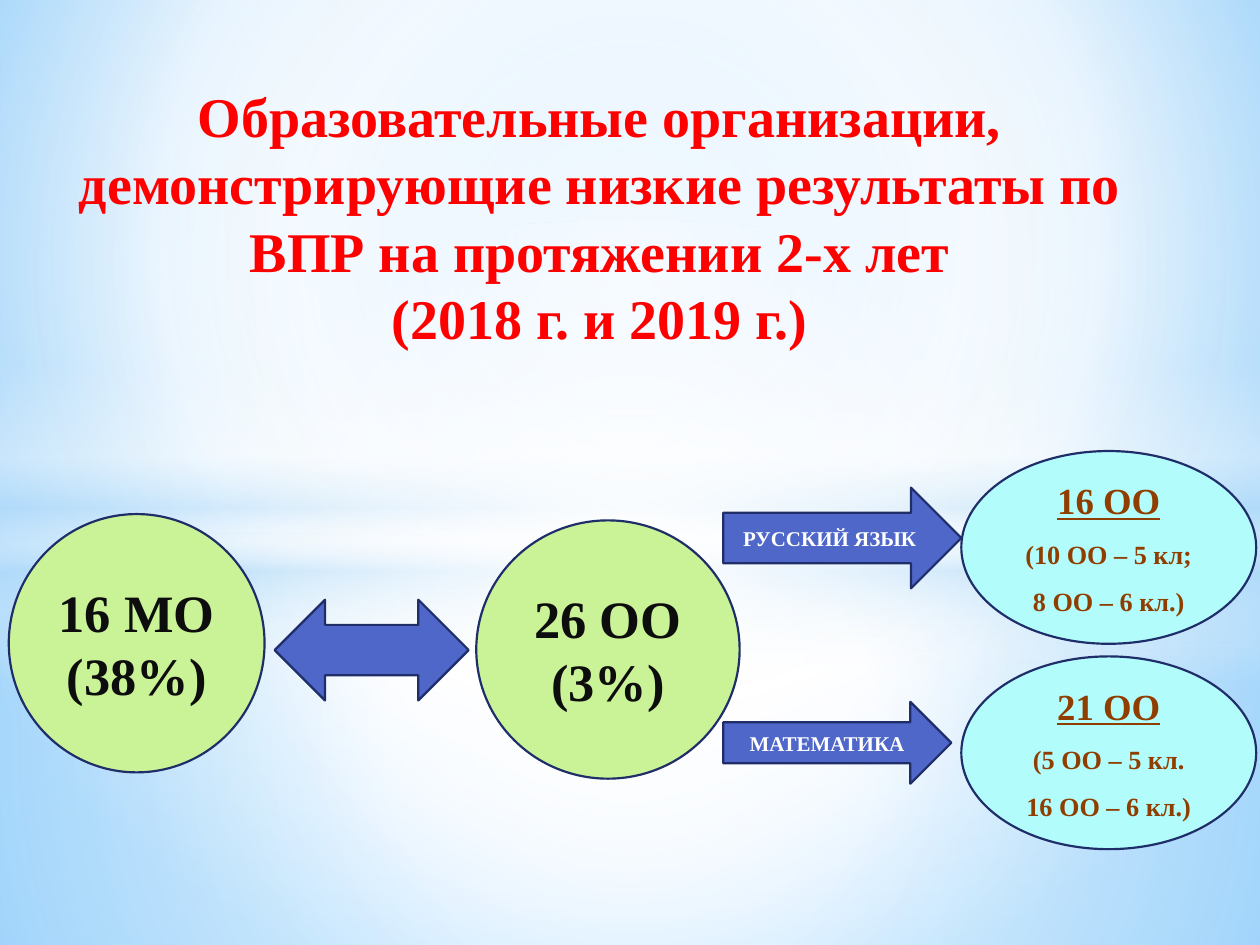
import pptx
import pptx.util
import pptx.dml.color
import pptx.enum.shapes
import pptx.enum.text
import pptx.oxml
import pptx.oxml.ns

Inches = pptx.util.Inches
Pt = pptx.util.Pt
Kind = pptx.enum.shapes.MSO_SHAPE

FONT = "Times New Roman"
GREEN, CYAN, BLUE, NAVY = "CAF297", "B2FCFC", "4E67C8", "1F2E69"
BLACK, WHITE, BROWN, RED = "0D0D0D", "FFFFFF", "903E00", "FF0000"
MIST = "B4DCFA"

TITLE = ("Образовательные организации, демонстрирующие низкие результаты "
         "по ВПР на протяжении 2-х лет\v(2018 г. и 2019 г.)")

# Gradient stops: position %, colour, opacity %
BACKDROP = [(0, "9ED5FF", 100), (60, WHITE, 100), (100, "5BB9FF", 100)]
CENTRE = (50, 50, 50, 50)
# Kind, place, stops, focus of a radial gradient (None: top to bottom)
GLOWS = [
    (Kind.RECTANGLE, (0, 4.23, 10, 3.27),
     [(0, WHITE, 91), (37, WHITE, 76), (100, MIST, 79)], CENTRE),
    (Kind.RECTANGLE, (0, 0, 10, 4.23),
     [(0, WHITE, 89), (48, WHITE, 62), (100, MIST, 79)], CENTRE),
    (Kind.RECTANGLE, (0, 2.9, 10, 2.5),
     [(0, WHITE, 0), (29, WHITE, 30), (45, MIST, 40), (55, WHITE, 26),
      (65, MIST, 60), (100, WHITE, 0)], None),
    (Kind.OVAL, (0, 1.75, 10, 5.58),
     [(0, WHITE, 100), (54, WHITE, 0)], CENTRE),
]

# Kind, place, fill, text colour, lines of (text, size)
DIAGRAM = [
    (Kind.OVAL, (0.07, 4.08, 2.03, 2.05), GREEN, BLACK,
     [("16 МО", 30), ("(38%)", 30)]),
    (Kind.LEFT_RIGHT_ARROW, (2.18, 4.76, 1.54, 0.8), BLUE, WHITE, []),
    (Kind.OVAL, (3.78, 4.13, 2.09, 2.05), GREEN, BLACK,
     [("26 ОО", 30), ("(3%)", 30)]),
    (Kind.RIGHT_ARROW, (5.74, 3.87, 1.89, 0.8), BLUE, WHITE,
     [("РУССКИЙ ЯЗЫК", 12)]),
    (Kind.RIGHT_ARROW, (5.74, 5.57, 1.81, 0.65), BLUE, WHITE,
     [("МАТЕМАТИКА", 12)]),
    (Kind.OVAL, (7.63, 3.58, 2.34, 1.53), CYAN, BROWN,
     [("16 ОО", 21), ("(10 ОО – 5 кл;", 15), ("8 ОО – 6 кл.)", 15)]),
    (Kind.OVAL, (7.63, 5.21, 2.34, 1.53), CYAN, BROWN,
     [("21 ОО", 21), ("(5 ОО – 5 кл.", 15), ("16 ОО – 6 кл.)", 15)]),
]


def rgb(colour):
    return pptx.dml.color.RGBColor.from_string(colour)


def fill_gradient(owner, fill, stops, focus):
    """Fill a shape or the page background with a gradient with opacity."""
    fill.solid()
    solid = owner.element.find(".//" + pptx.oxml.ns.qn("a:solidFill"))
    stop_xml = "".join(
        f'<a:gs pos="{position * 1000}"><a:srgbClr val="{colour}">'
        f'<a:alpha val="{opacity * 1000}"/></a:srgbClr></a:gs>'
        for position, colour, opacity in stops)
    if focus:
        sides = " ".join(f'{side}="{value * 1000}"'
                         for side, value in zip("ltrb", focus))
        course = f'<a:path path="circle"><a:fillToRect {sides}/></a:path>'
    else:
        course = '<a:lin ang="5400000" scaled="0"/>'
    gradient = pptx.oxml.parse_xml(
        f'<a:gradFill {pptx.oxml.ns.nsdecls("a")} rotWithShape="1">'
        f"<a:gsLst>{stop_xml}</a:gsLst>{course}</a:gradFill>")
    solid.getparent().replace(solid, gradient)


def add_shape(page, kind, place):
    shape = page.shapes.add_shape(kind, *map(Inches, place))
    shape.shadow.inherit = False
    return shape


def write(frame, lines, colour):
    """Write centred bold lines; a list led by a larger line is spaced."""
    frame.word_wrap = True
    headed = lines[0][1] > lines[-1][1]
    for index, (text, size) in enumerate(lines):
        para = frame.add_paragraph() if index else frame.paragraphs[0]
        para.text = text
        para.alignment = pptx.enum.text.PP_ALIGN.CENTER
        para.font.name = FONT
        para.font.size = Pt(size)
        para.font.bold = True
        para.font.color.rgb = rgb(colour)
        if headed:
            para.space_after = Pt(9)
            para.font.underline = index == 0


deck = pptx.Presentation()
deck.slide_width, deck.slide_height = Inches(10), Inches(7.5)
page = deck.slides.add_slide(deck.slide_layouts[6])
fill_gradient(page, page.background.fill, BACKDROP, (20, 10, 20, 60))

for kind, place, stops, focus in GLOWS:
    glow = add_shape(page, kind, place)
    glow.line.fill.background()
    fill_gradient(glow, glow.fill, stops, focus)

for kind, place, fill, colour, lines in DIAGRAM:
    shape = add_shape(page, kind, place)
    shape.fill.solid()
    shape.fill.fore_color.rgb = rgb(fill)
    shape.line.color.rgb = rgb(NAVY)
    shape.line.width = Pt(1.25)
    shape.text_frame.vertical_anchor = pptx.enum.text.MSO_ANCHOR.MIDDLE
    if lines:
        write(shape.text_frame, lines, colour)

title = page.shapes.add_textbox(*map(Inches, (0.35, 0.6, 8.82, 2.26)))
write(title.text_frame, [(TITLE, 32)], RED)

deck.save("out.pptx")
